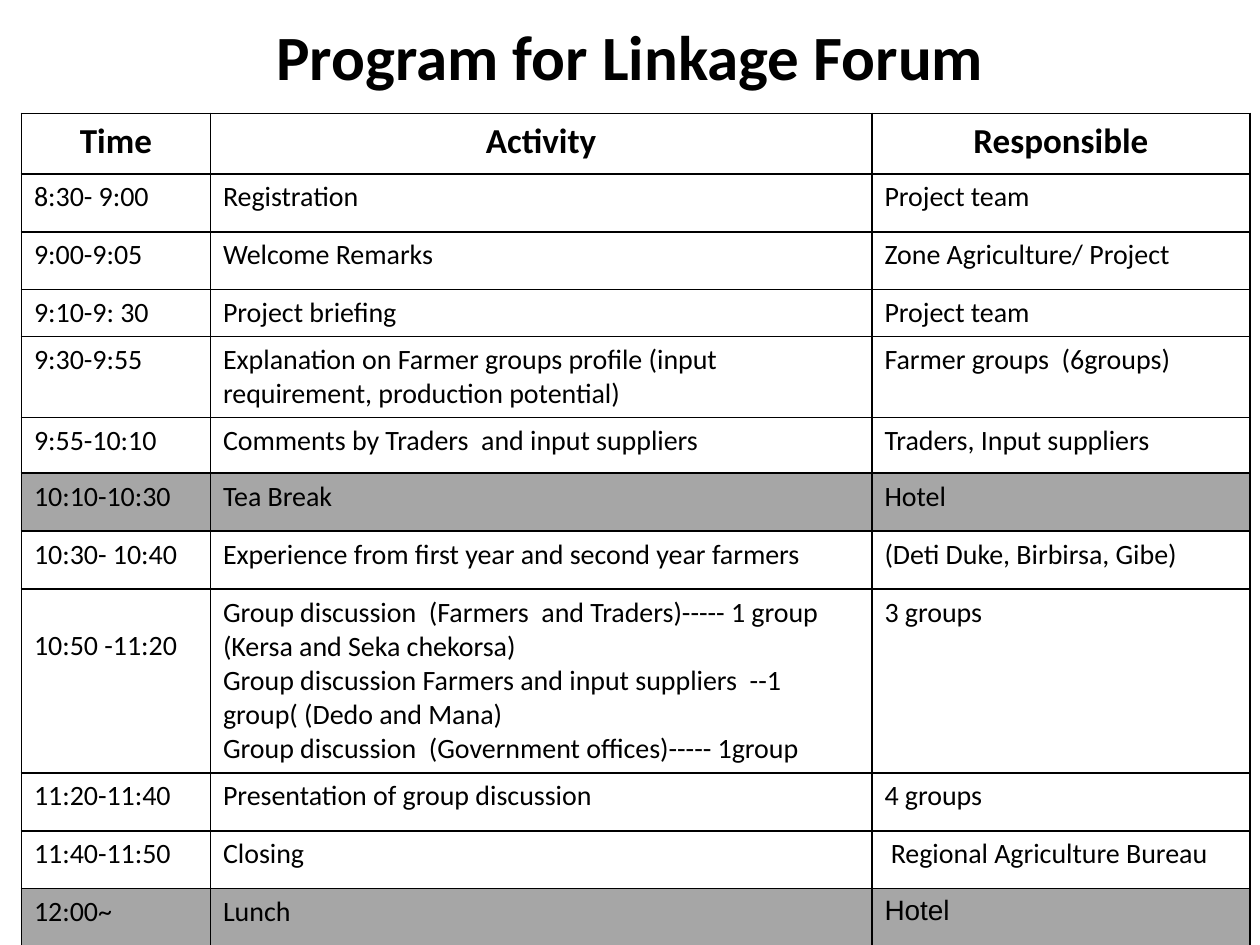
from dataclasses import dataclass

from lxml.etree import SubElement
from pptx import Presentation
from pptx.dml.color import RGBColor
from pptx.enum.text import MSO_ANCHOR, PP_ALIGN
from pptx.oxml.ns import qn
from pptx.table import Table, _Cell
from pptx.util import Inches, Pt

BLACK = RGBColor(0x00, 0x00, 0x00)
BREAK_GRAY = RGBColor(0xA6, 0xA6, 0xA6)
FONT = "Calibri"
COLUMN_WIDTHS = (1.5, 5.25, 3)
HEADINGS = ("Time", "Activity", "Responsible")
HEADING_HEIGHT = 0.48
CELL_TOP = 0.05


@dataclass(frozen=True)
class Session:
    time: str
    activity: str
    responsible: str
    height: float = 0.46
    is_break: bool = False
    time_drop: float = 0
    responsible_font: str = FONT


GROUP_DISCUSSIONS = "\n".join((
    "Group discussion  (Farmers  and Traders)----- 1 group (Kersa and Seka chekorsa)",
    "Group discussion Farmers and input suppliers  --1 group( (Dedo and Mana)",
    "Group discussion  (Government offices)----- 1group",
))

SESSIONS = (
    Session("8:30- 9:00", "Registration", "Project team"),
    Session("9:00-9:05", "Welcome Remarks", "Zone Agriculture/ Project"),
    Session("9:10-9: 30", "Project briefing", "Project team", height=0.37),
    Session("9:30-9:55",
            "Explanation on Farmer groups profile (input requirement, production potential)",
            "Farmer groups  (6groups)", height=0.48),
    Session("9:55-10:10", "Comments by Traders  and input suppliers",
            "Traders, Input suppliers", height=0.44),
    Session("10:10-10:30", "Tea Break", "Hotel", is_break=True),
    Session("10:30- 10:40", "Experience from first year and second year farmers",
            "(Deti Duke, Birbirsa, Gibe)"),
    Session("10:50 -11:20", GROUP_DISCUSSIONS, "3 groups", height=1.38, time_drop=0.27),
    Session("11:20-11:40", "Presentation of group discussion", "4 groups"),
    Session("11:40-11:50", "Closing", " Regional Agriculture Bureau"),
    Session("12:00~", "Lunch", "Hotel", is_break=True, responsible_font="Arial"),
)


def add_borders(cell: _Cell) -> None:
    properties = cell._tc.get_or_add_tcPr()
    for position, side in enumerate(("lnL", "lnR", "lnT", "lnB")):
        line = SubElement(properties, qn(f"a:{side}"), w=str(Pt(1)))
        fill = SubElement(line, qn("a:solidFill"))
        SubElement(fill, qn("a:srgbClr"), val=str(BLACK))
        properties.insert(position, line)  # borders must precede the cell fill


def write_text(frame, text: str, size: int, bold: bool = False,
               align: PP_ALIGN = PP_ALIGN.LEFT, font: str = FONT) -> None:
    frame.text = text
    for para in frame.paragraphs:
        para.alignment = align
        para.font.name = font
        para.font.size = Pt(size)
        para.font.bold = bold
        para.font.color.rgb = BLACK


def style_cell(cell: _Cell, shaded: bool = False) -> None:
    cell.margin_left = cell.margin_right = Inches(0.1)
    cell.margin_top = cell.margin_bottom = Inches(CELL_TOP)
    if shaded:
        cell.fill.solid()
        cell.fill.fore_color.rgb = BREAK_GRAY
    else:
        cell.fill.background()
    add_borders(cell)


def fill_headings(table: Table) -> None:
    table.rows[0].height = Inches(HEADING_HEIGHT)
    for cell, heading in zip(table.rows[0].cells, HEADINGS):
        style_cell(cell)
        write_text(cell.text_frame, heading, 20, bold=True, align=PP_ALIGN.CENTER)


def fill_session(table: Table, row_index: int, session: Session) -> None:
    row = table.rows[row_index]
    row.height = Inches(session.height)
    texts = (session.time, session.activity, session.responsible)
    fonts = (FONT, FONT, session.responsible_font)
    for cell, text, font in zip(row.cells, texts, fonts):
        style_cell(cell, session.is_break)
        write_text(cell.text_frame, text, 16, font=font)
    row.cells[0].margin_top = Inches(CELL_TOP + session.time_drop)


def main() -> None:
    deck = Presentation()
    deck.slide_width, deck.slide_height = Inches(10), Inches(7.5)
    page = deck.slides.add_slide(deck.slide_layouts[5])

    title = page.shapes.title
    title.left, title.top = Inches(0.5), Inches(0)
    title.width, title.height = Inches(9), Inches(0.87)
    title.text_frame.vertical_anchor = MSO_ANCHOR.MIDDLE
    write_text(title.text_frame, "Program for Linkage Forum", 36, bold=True,
               align=PP_ALIGN.CENTER)

    total_height = HEADING_HEIGHT + sum(session.height for session in SESSIONS)
    table = page.shapes.add_table(
        len(SESSIONS) + 1, len(HEADINGS), Inches(0.17), Inches(0.9),
        Inches(sum(COLUMN_WIDTHS)), Inches(total_height)).table
    table.first_row = table.horz_banding = False
    for column, width in zip(table.columns, COLUMN_WIDTHS):
        column.width = Inches(width)
    fill_headings(table)
    for row_index, session in enumerate(SESSIONS, start=1):
        fill_session(table, row_index, session)

    deck.save("out.pptx")


if __name__ == "__main__":
    main()
